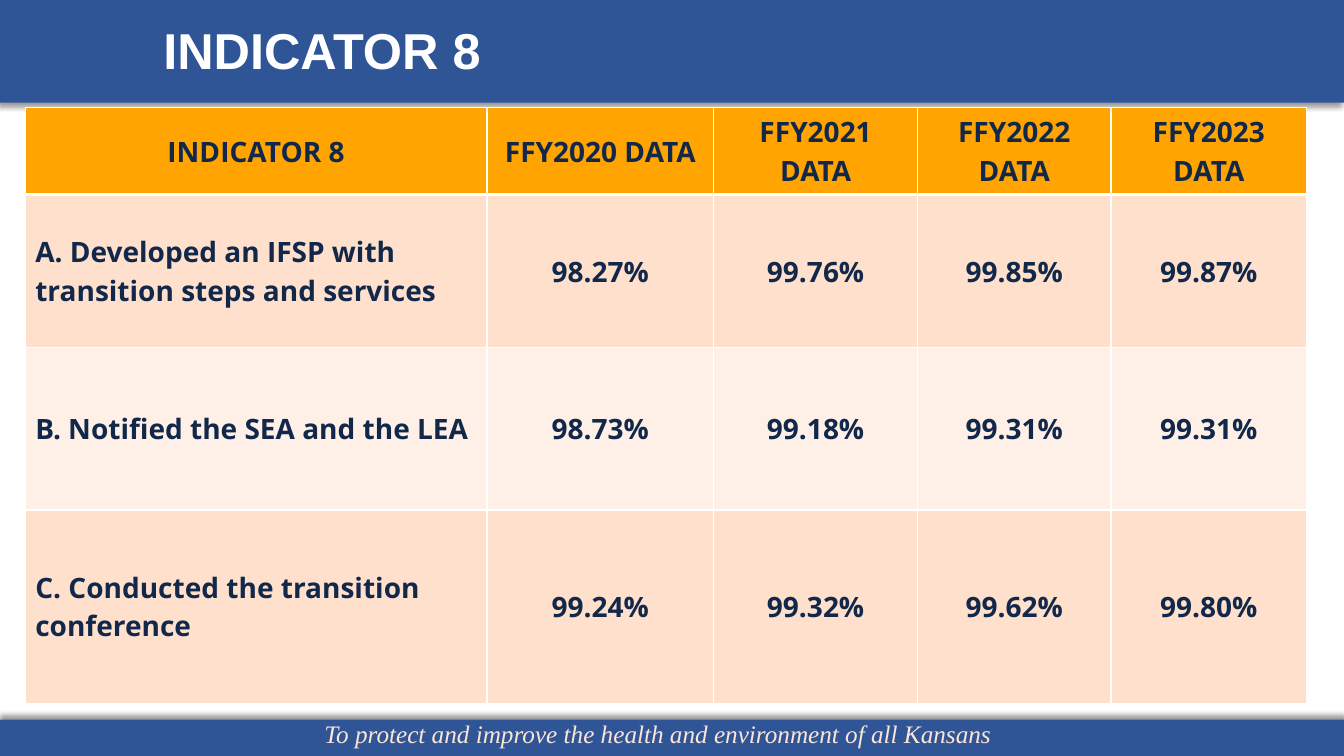
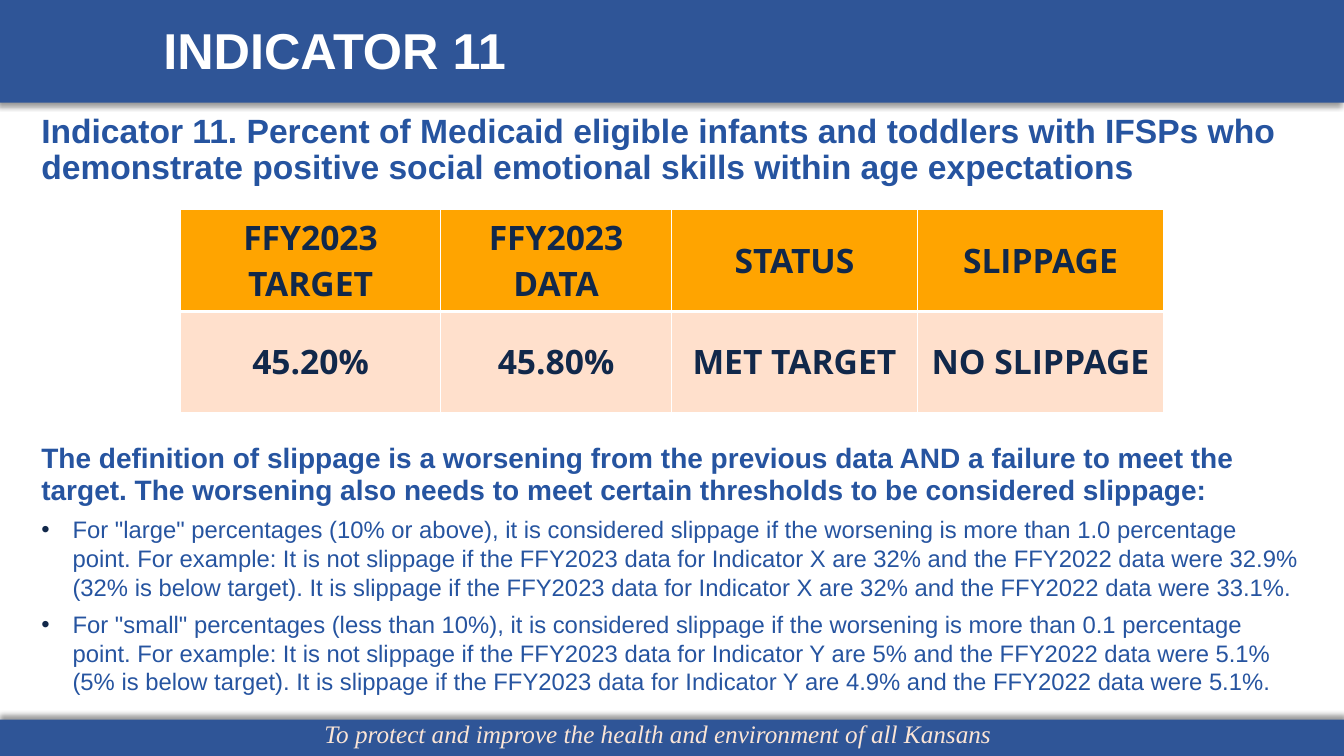
from lxml import etree
from pptx import Presentation
from pptx.dml.color import RGBColor
from pptx.enum.shapes import MSO_SHAPE
from pptx.enum.text import MSO_ANCHOR, MSO_AUTO_SIZE, PP_ALIGN
from pptx.oxml.ns import qn
from pptx.util import Inches, Pt

BAND_BLUE = RGBColor(0x2F, 0x55, 0x97)
TEXT_BLUE = RGBColor(0x26, 0x54, 0xA0)
NAVY = RGBColor(0x11, 0x28, 0x4A)
ORANGE = RGBColor(0xFF, 0xA4, 0x00)
PEACH = RGBColor(0xFF, 0xE0, 0xCC)
PALE_PEACH = RGBColor(0xFF, 0xF0, 0xE7)
MOTTO_CREAM = RGBColor(0xFB, 0xE5, 0xD6)
WHITE = RGBColor(0xFF, 0xFF, 0xFF)

# Content
MOTTO = "To protect and improve the health and environment of all Kansans"

BANDS = [  # top, height, shadow direction in degrees
    (-0.01, 1.03, 135),
    (7.14, 0.37, 270),
]

TRANSITION_TABLE = {
    "left": 0.25, "top": 1.07, "size": 20, "label_column": True,
    "columns": [4.58, 2.25, 2.02, 1.92, 1.94],
    "heights": [0.86, 1.52, 1.61, 1.92],
    "rows": [
        ["INDICATOR 8", "FFY2020 DATA", "FFY2021 DATA", "FFY2022 DATA", "FFY2023 DATA"],
        ["A. Developed an IFSP with transition steps and services",
         "98.27%", "99.76%", "99.85%", "99.87%"],
        ["B. Notified the SEA and the LEA", "98.73%", "99.18%", "99.31%", "99.31%"],
        ["C. Conducted the transition conference",
         "99.24%", "99.32%", "99.62%", "99.80%"],
    ],
}

SLIPPAGE_TABLE = {
    "left": 1.79, "top": 2.08, "size": 24, "label_column": False,
    "columns": [2.58, 2.29, 2.44, 2.44],
    "heights": [1.01, 1.0],
    "rows": [
        ["FFY2023 TARGET", "FFY2023 DATA", "STATUS", "SLIPPAGE"],
        ["45.20%", "45.80%", "MET TARGET", "NO SLIPPAGE"],
    ],
}

# Text, size, line spacing, space before, is a bullet
SLIPPAGE_TEXT = [
    ("Indicator 11. Percent of Medicaid eligible infants and toddlers with IFSPs who "
     "demonstrate positive social emotional skills within age expectations",
     24, 25.7, 0, False),
    ("The definition of slippage is a worsening from the previous data AND a failure to "
     "meet the target. The worsening also needs to meet certain thresholds to be "
     "considered slippage:", 20, 23.5, 182, False),
    ("For \"large\" percentages (10% or above), it is considered slippage if the worsening "
     "is more than 1.0 percentage point. For example: It is not slippage if the FFY2023 "
     "data for Indicator X are 32% and the FFY2022 data were 32.9% (32% is below target). "
     "It is slippage if the FFY2023 data for Indicator X are 32% and the FFY2022 data "
     "were 33.1%.", 17, 20.5, 6, True),
    ("For \"small\" percentages (less than 10%), it is considered slippage if the worsening "
     "is more than 0.1 percentage point. For example: It is not slippage if the FFY2023 "
     "data for Indicator Y are 5% and the FFY2022 data were 5.1% (5% is below target). "
     "It is slippage if the FFY2023 data for Indicator Y are 4.9% and the FFY2022 data "
     "were 5.1%.", 17, 20.5, 6, True),
]


def add_xml(parent, tag, **attributes):
    values = {name: str(value) for name, value in attributes.items()}
    return etree.SubElement(parent, qn(tag), values)


def place(shape, left, top, width, height):
    shape.left, shape.top = Inches(left), Inches(top)
    shape.width, shape.height = Inches(width), Inches(height)


def set_font(paragraph, name, size, color, bold=False, italic=False):
    font = paragraph.font
    font.name, font.size = name, Pt(size)
    font.bold, font.italic = bold, italic
    font.color.rgb = color


def add_band(shapes, top, height, direction):
    band = shapes.add_shape(MSO_SHAPE.RECTANGLE, 0, Inches(top),
                            Inches(13.33), Inches(height))
    band.fill.solid()
    band.fill.fore_color.rgb = BAND_BLUE
    band.line.fill.background()
    band.shadow.inherit = False
    effects = band.element.spPr.find(qn("a:effectLst"))
    shadow = add_xml(effects, "a:outerShdw", blurRad=Pt(4), dist=Pt(3),
                     dir=direction * 60000, algn="t", rotWithShape=0)
    color = add_xml(shadow, "a:srgbClr", val="000000")
    add_xml(color, "a:alpha", val=40000)
    return band


def add_motto(shapes):
    box = shapes.add_textbox(Inches(3.12), Inches(7.08), Inches(7.07), Inches(0.4))
    box.text_frame.word_wrap = True
    paragraph = box.text_frame.paragraphs[0]
    paragraph.text = MOTTO
    set_font(paragraph, "Times New Roman", 18, MOTTO_CREAM, italic=True)
    return box


def decorate_master(presentation, slide):
    """Build the bands and motto, then move them behind the master's placeholders."""
    parts = [add_band(slide.shapes, *band) for band in BANDS]
    parts.append(add_motto(slide.shapes))
    tree = presentation.slide_master.shapes.element
    for index, part in enumerate(parts):
        part.element.nvSpPr.cNvPr.id = 20 + index
        tree.insert(2 + index, part.element)


def add_titled_slide(presentation, layout_name, text):
    layout = presentation.slide_layouts.get_by_name(layout_name)
    slide = presentation.slides.add_slide(layout)
    title = slide.shapes.title
    place(title, 1.52, 0.23, 10.67, 0.6)
    frame = title.text_frame
    frame.auto_size = MSO_AUTO_SIZE.NONE
    frame.vertical_anchor = MSO_ANCHOR.MIDDLE
    paragraph = frame.paragraphs[0]
    paragraph.text = text
    paragraph.alignment = PP_ALIGN.LEFT
    paragraph.line_spacing = 0.9
    set_font(paragraph, "Arial", 36, WHITE, bold=True)
    return slide


def fill_body(body, items):
    place(body, 0.31, 1.08, 12.71, 5.92)
    frame = body.text_frame
    frame.auto_size = MSO_AUTO_SIZE.NONE
    for index, (text, size, spacing, before, is_bullet) in enumerate(items):
        paragraph = frame.add_paragraph() if index else frame.paragraphs[0]
        paragraph.text = text
        properties = paragraph._p.get_or_add_pPr()
        hanging = Inches(0.31) if is_bullet else 0
        properties.set("marL", str(hanging))
        properties.set("indent", str(-hanging))
        if is_bullet:
            bullet_color = add_xml(properties, "a:buClr")
            add_xml(bullet_color, "a:srgbClr", val=NAVY)
            add_xml(properties, "a:buFont", typeface="Arial")
            add_xml(properties, "a:buChar", char="•")
        else:
            add_xml(properties, "a:buNone")
        paragraph.line_spacing = Pt(spacing)
        paragraph.space_before = Pt(before)
        set_font(paragraph, "Arial", size, TEXT_BLUE, bold=not is_bullet)


def set_borders(cell, row):
    properties = cell._tc.get_or_add_tcPr()
    widths = {"L": 1, "R": 1, "T": 3 if row == 1 else 1, "B": 3 if row == 0 else 1}
    for side, width in widths.items():
        line = add_xml(properties, f"a:ln{side}", w=Pt(width))
        add_xml(add_xml(line, "a:solidFill"), "a:srgbClr", val=WHITE)


def add_data_table(slide, data):
    rows, columns, heights = data["rows"], data["columns"], data["heights"]
    table = slide.shapes.add_table(
        len(rows), len(columns), Inches(data["left"]), Inches(data["top"]),
        Inches(sum(columns)), Inches(sum(heights))).table
    for column, width in zip(table.columns, columns):
        column.width = Inches(width)
    for row_index, (texts, height) in enumerate(zip(rows, heights)):
        table.rows[row_index].height = Inches(height)
        band_fill = PEACH if row_index % 2 else PALE_PEACH
        for column_index, text in enumerate(texts):
            cell = table.cell(row_index, column_index)
            set_borders(cell, row_index)
            cell.fill.solid()
            cell.fill.fore_color.rgb = band_fill if row_index else ORANGE
            cell.vertical_anchor = MSO_ANCHOR.MIDDLE
            paragraph = cell.text_frame.paragraphs[0]
            paragraph.text = text
            is_label = data["label_column"] and row_index and not column_index
            paragraph.alignment = PP_ALIGN.LEFT if is_label else PP_ALIGN.CENTER
            set_font(paragraph, "Open Sans", data["size"], NAVY, bold=True)


def main():
    presentation = Presentation()
    presentation.slide_width, presentation.slide_height = Inches(13.33), Inches(7.5)

    # Transition indicator, with the shared bands
    slide = add_titled_slide(presentation, "Title Only", "INDICATOR 8")
    decorate_master(presentation, slide)
    add_data_table(slide, TRANSITION_TABLE)

    # Social emotional indicator
    slide = add_titled_slide(presentation, "Title and Content", "INDICATOR 11")
    fill_body(slide.placeholders[1], SLIPPAGE_TEXT)
    add_data_table(slide, SLIPPAGE_TABLE)

    presentation.save("out.pptx")


if __name__ == "__main__":
    main()
